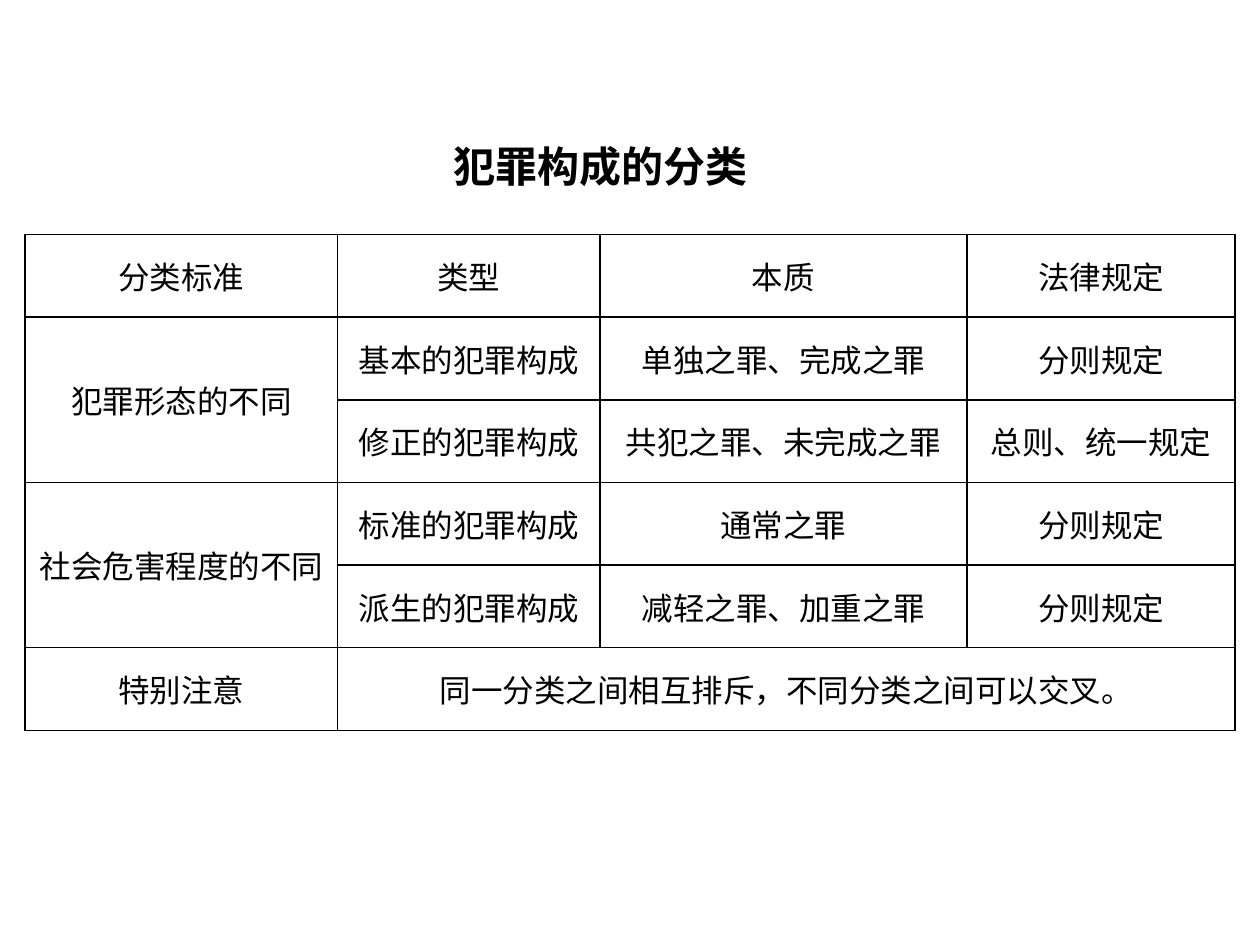
from lxml.etree import SubElement
from pptx import Presentation
from pptx.dml.color import RGBColor
from pptx.enum.text import MSO_ANCHOR as Anchor, MSO_AUTO_SIZE as AutoSize, PP_ALIGN as Align
from pptx.oxml.ns import qn
from pptx.util import Pt

FONT = "Noto Sans CJK SC"
INK = "000000"
COLUMN_WIDTHS = [178.8, 149.8, 209.7, 153.4]
ROWS = [
    ["分类标准", "类型", "本质", "法律规定"],
    ["犯罪形态的不同", "基本的犯罪构成", "单独之罪、完成之罪", "分则规定"],
    ["", "修正的犯罪构成", "共犯之罪、未完成之罪", "总则、统一规定"],
    ["社会危害程度的不同", "标准的犯罪构成", "通常之罪", "分则规定"],
    ["", "派生的犯罪构成", "减轻之罪、加重之罪", "分则规定"],
    ["特别注意", "同一分类之间相互排斥，不同分类之间可以交叉。", "", ""],
]
MERGES = [((1, 0), (2, 0)), ((3, 0), (4, 0)), ((5, 1), (5, 3))]


def color(value):
    """Return the colour for a hex string."""
    return RGBColor.from_string(value)


def style_text(paragraph, size, bold=False):
    """Format every run of a paragraph, for Latin and East Asian text."""
    for run in paragraph.runs:
        run.font.size = Pt(size)
        run.font.bold = bold
        run.font.color.rgb = color(INK)
        run.font.name = FONT
        SubElement(run.font._element, qn("a:ea"), typeface=FONT)


def add_borders(cell, width=1):
    """Draw a solid line on all four sides of a cell."""
    properties = cell._tc.get_or_add_tcPr()
    for side in ("lnL", "lnR", "lnT", "lnB"):
        line = SubElement(properties, qn(f"a:{side}"), w=str(Pt(width)))
        fill = SubElement(line, qn("a:solidFill"))
        SubElement(fill, qn("a:srgbClr"), val=INK)


def add_title(slide, left, top, width, height):
    """Place the slide heading in the given box."""
    heading = slide.shapes.add_textbox(Pt(left), Pt(top), Pt(width), Pt(height)).text_frame
    heading.word_wrap = False
    heading.auto_size = AutoSize.SHAPE_TO_FIT_TEXT
    heading.text = "犯罪构成的分类"
    style_text(heading.paragraphs[0], 24, bold=True)


def add_classification(slide, left, top, width, height):
    """Place the classification table in the given box."""
    table = slide.shapes.add_table(
        len(ROWS), len(COLUMN_WIDTHS), Pt(left), Pt(top), Pt(width), Pt(height)
    ).table
    table.first_row = table.horz_banding = False
    for column, column_width in zip(table.columns, COLUMN_WIDTHS):
        column.width = Pt(column_width)
    for row, labels in zip(table.rows, ROWS):
        row.height = Pt(height / len(ROWS))
        for cell, label in zip(row.cells, labels):
            cell.text = label
            cell.vertical_anchor = Anchor.MIDDLE
            add_borders(cell)
            cell.fill.background()
            paragraph = cell.text_frame.paragraphs[0]
            paragraph.alignment = Align.CENTER
            style_text(paragraph, 18)
    for first, last in MERGES:
        table.cell(*first).merge(table.cell(*last))


def main():
    """Build the slide and save it."""
    deck = Presentation()
    deck.slide_width, deck.slide_height = Pt(720), Pt(540)
    slide = deck.slides.add_slide(deck.slide_layouts[6])
    add_title(slide, 252, 77, 185, 36)
    add_classification(slide, 14.2, 134, sum(COLUMN_WIDTHS), 283.5)
    deck.save("out.pptx")


if __name__ == "__main__":
    main()
